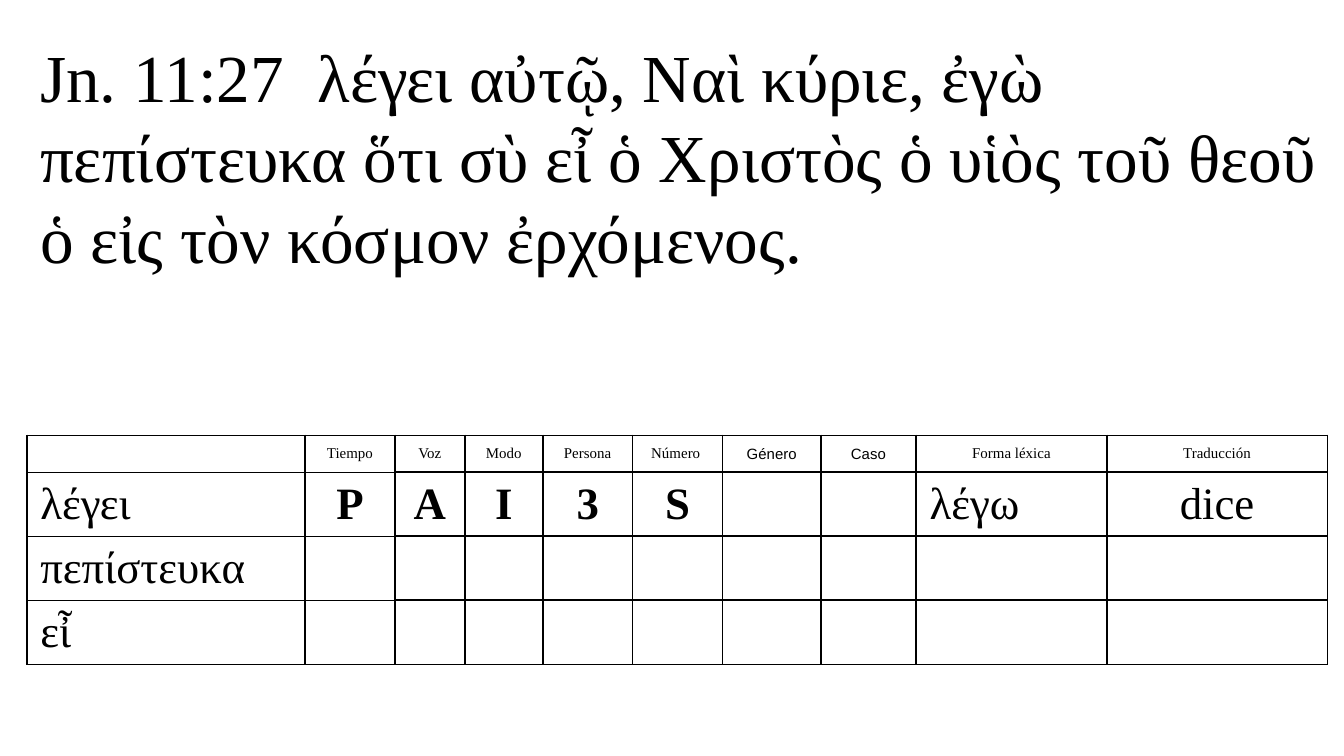
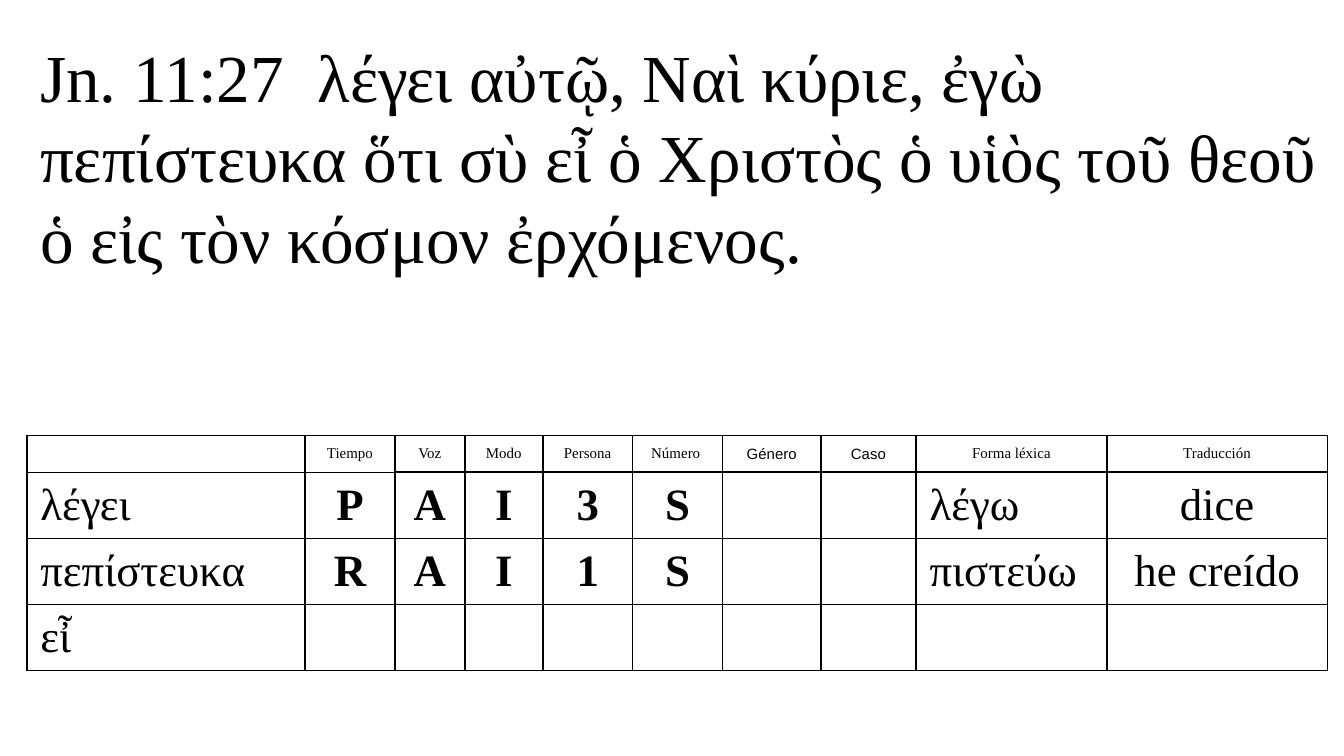
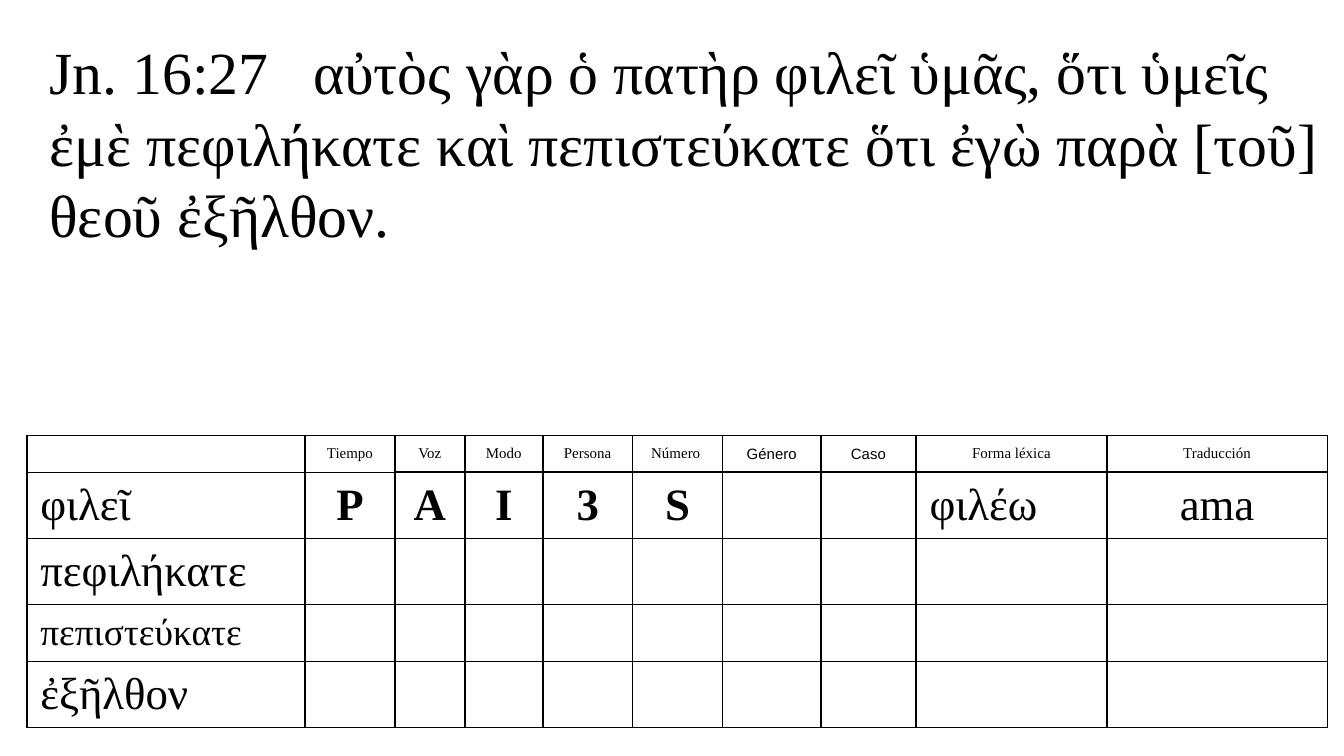
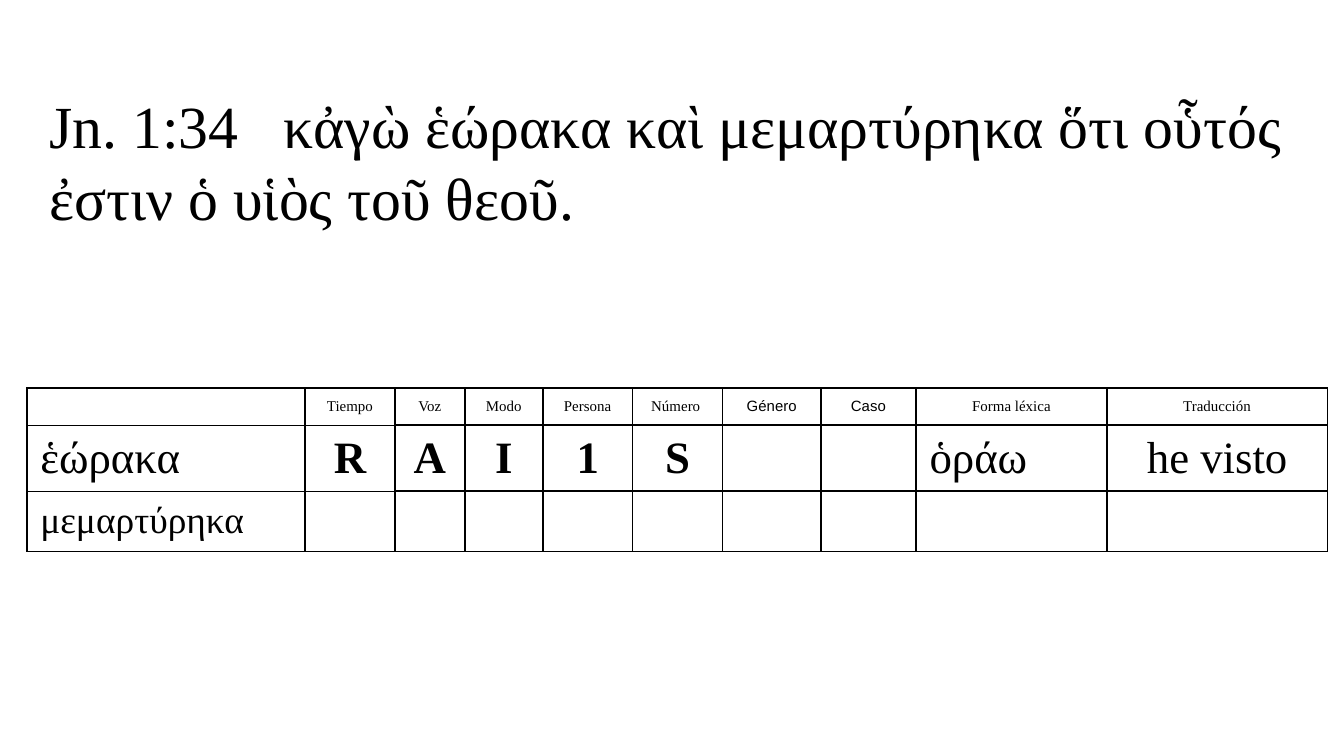
from lxml.etree import SubElement
from pptx import Presentation
from pptx.dml.color import RGBColor
from pptx.enum.text import MSO_ANCHOR, MSO_AUTO_SIZE, PP_ALIGN
from pptx.oxml.ns import qn
from pptx.util import Pt

COLORS = {"ink": "000000", "paper": "FFFFFF"}
SERIF = "Times New Roman"
SANS = "Arial"

HEADINGS = ["", "Tiempo", "Voz", "Modo", "Persona", "Número ", "Género", "Caso",
            "Forma léxica", "Traducción"]
COLUMN_WIDTHS = [149, 48.2, 37.4, 41.8, 48.2, 48.2, 52.6, 51.1, 102.2, 118.1]
SANS_COLUMNS = (6, 7)
CODE_COLUMNS = range(1, 6)
LEXICAL_COLUMN = 8
TABLE_LEFT = 14.4
HEADER_HEIGHT = 19.8
ROW_HEIGHT = 34.3
CELL_FORMAT = {
    "vertical_anchor": MSO_ANCHOR.MIDDLE,
    "margin_left": Pt(7.2),
    "margin_right": Pt(7.2),
    "margin_top": Pt(3.3),
    "margin_bottom": Pt(3.3),
}

LEGEI = ("λέγει", "PAI3S", "λέγω", "dice")
PEPISTEUKA = ("πεπίστευκα", "RAI1S", "πιστεύω", "he creído")
VERSE_11_27 = {
    "text": "Jn. 11:27  λέγει αὐτῷ, Ναὶ κύριε, ἐγὼ πεπίστευκα ὅτι σὺ εἶ ὁ Χριστὸς "
            "ὁ υἱὸς τοῦ θεοῦ ὁ εἰς τὸν κόσμον ἐρχόμενος.",
    "frame": (14.4, 15.1, 705.6, 138.2),
    "size": 36,
}
VERSE_16_27 = {
    "text": "Jn. 16:27   αὐτὸς γὰρ ὁ πατὴρ φιλεῖ ὑμᾶς, ὅτι ὑμεῖς ἐμὲ πεφιλήκατε καὶ "
            "πεπιστεύκατε ὅτι ἐγὼ παρὰ [τοῦ] θεοῦ ἐξῆλθον.",
    "frame": (19.4, 15.1, 700.6, 123.8),
    "size": 32,
}
VERSE_1_34 = {
    "text": "Jn. 1:34   κἀγὼ ἑώρακα καὶ μεμαρτύρηκα ὅτι οὗτός ἐστιν ὁ υἱὸς τοῦ θεοῦ.",
    "frame": (19.4, 43.9, 686.2, 85),
    "size": 32,
}
SLIDES = [
    {"verse": VERSE_11_27, "top": 233.2, "words": [LEGEI, ("πεπίστευκα",), ("εἶ",)]},
    {"verse": VERSE_11_27, "top": 233.2, "words": [LEGEI, PEPISTEUKA, ("εἶ",)]},
    {"verse": VERSE_16_27, "top": 233.2,
     "words": [("φιλεῖ", "PAI3S", "φιλέω", "ama"), ("πεφιλήκατε",),
               ("πεπιστεύκατε",), ("ἐξῆλθον",)]},
    {"verse": VERSE_1_34, "top": 208,
     "words": [("ἑώρακα", "RAI1S", "ὁράω", "he visto"), ("μεμαρτύρηκα",)]},
]
SMALL_WORDS = {"πεπιστεύκατε": 30.5, "μεμαρτύρηκα": 32.2}


def apply_format(target, values):
    for name, value in values.items():
        setattr(target, name, value)


def write(para, text, size, font=SERIF, bold=False):
    span = para.add_run()
    span.text = text
    apply_format(span.font, {"name": font, "size": Pt(size), "bold": bold})
    span.font.color.rgb = RGBColor.from_string(COLORS["ink"])


def add_verse(page, verse):
    box = page.shapes.add_textbox(*map(Pt, verse["frame"]))
    apply_format(box.text_frame, {"word_wrap": True,
                                  "auto_size": MSO_AUTO_SIZE.SHAPE_TO_FIT_TEXT})
    write(box.text_frame.paragraphs[0], verse["text"], verse["size"])


def set_borders(cell, widths):
    properties = cell._tc.get_or_add_tcPr()
    for side, width in widths.items():
        line = SubElement(properties, qn(f"a:ln{side}"), w=str(Pt(width)))
        fill = SubElement(line, qn("a:solidFill"))
        SubElement(fill, qn("a:srgbClr"), val=COLORS["ink"])


def fill_cell(cell, text, row, column):
    heading = row == 0
    rule = 0.75 if column < 2 else 1
    set_borders(cell, {"L": 1, "R": 1, "T": 1 if heading else rule, "B": rule})
    cell.fill.background()
    apply_format(cell, CELL_FORMAT)
    para = cell.text_frame.paragraphs[0]
    if not text:
        SubElement(para._p, qn("a:endParaRPr"), sz="800")
        return
    if heading or column not in (0, LEXICAL_COLUMN):
        para.alignment = PP_ALIGN.CENTER
    if heading:
        write(para, text, 8, SANS if column in SANS_COLUMNS else SERIF)
    else:
        write(para, text, 20 if text in SMALL_WORDS else 24, bold=column in CODE_COLUMNS)


def expand_word(word, code="", lexical="", translation=""):
    return [word, *code.ljust(len(CODE_COLUMNS)), "", "", lexical, translation]


def add_parsing_table(page, top, words):
    rows = [HEADINGS] + [expand_word(*word) for word in words]
    heights = [HEADER_HEIGHT] + [SMALL_WORDS.get(word[0], ROW_HEIGHT) for word in words]
    frame = page.shapes.add_table(len(rows), len(HEADINGS), Pt(TABLE_LEFT), Pt(top),
                                  Pt(sum(COLUMN_WIDTHS)), Pt(sum(heights)))
    table = frame.table
    apply_format(table, {"first_row": False, "horz_banding": False})
    for column, width in zip(table.columns, COLUMN_WIDTHS):
        column.width = Pt(width)
    for row, height in zip(table.rows, heights):
        row.height = Pt(height)
    for row, texts in enumerate(rows):
        for column, text in enumerate(texts):
            fill_cell(table.cell(row, column), text if text.strip() else "", row, column)


def main():
    deck = Presentation()
    apply_format(deck, {"slide_width": Pt(720), "slide_height": Pt(405)})
    for content in SLIDES:
        page = deck.slides.add_slide(deck.slide_layouts[6])
        page.background.fill.solid()
        page.background.fill.fore_color.rgb = RGBColor.from_string(COLORS["paper"])
        add_parsing_table(page, content["top"], content["words"])
        add_verse(page, content["verse"])
    deck.save("out.pptx")


if __name__ == "__main__":
    main()
